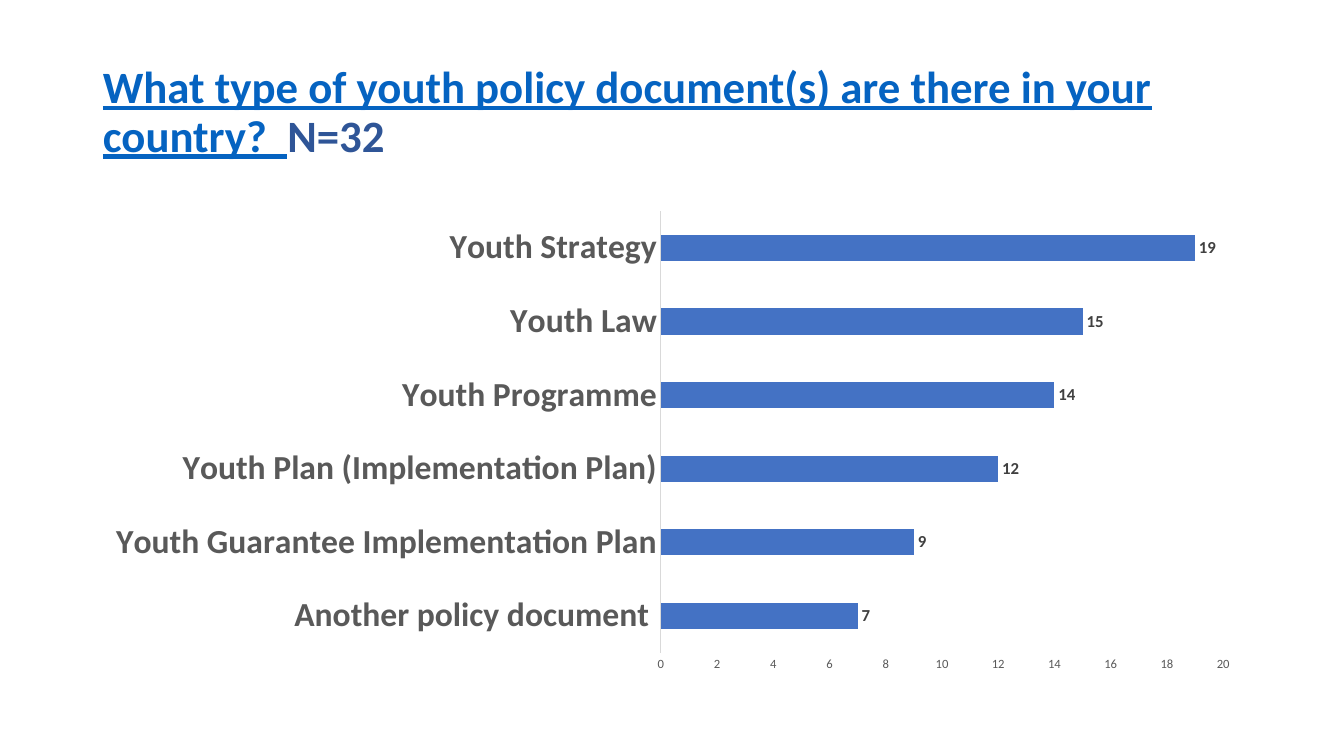
"""Build the youth policy documents slide with its bar chart."""
from lxml.etree import SubElement
from pptx import Presentation
from pptx.chart.data import CategoryChartData
from pptx.dml.color import RGBColor
from pptx.enum.chart import XL_CHART_TYPE as ChartType
from pptx.enum.chart import XL_LABEL_POSITION as LabelPosition
from pptx.enum.chart import XL_TICK_MARK as TickMark
from pptx.enum.text import MSO_ANCHOR as Anchor
from pptx.enum.text import MSO_AUTO_SIZE as AutoSize
from pptx.enum.text import PP_ALIGN as Align
from pptx.oxml.ns import qn
from pptx.util import Inches, Pt

FONT = "Calibri"
LINK_BLUE = RGBColor(0x05, 0x63, 0xC1)
DARK_BLUE = RGBColor(0x2F, 0x55, 0x97)
BAR_BLUE = RGBColor(0x44, 0x72, 0xC4)
AXIS_GREY = RGBColor(0x59, 0x59, 0x59)
LABEL_GREY = RGBColor(0x40, 0x40, 0x40)
LINE_GREY = RGBColor(0xD9, 0xD9, 0xD9)
BLACK = RGBColor(0, 0, 0)

LEFT, WIDTH = Inches(0.92), Inches(11.5)
DOCUMENTS = {
    "Another policy document ": 7,
    "Youth Guarantee Implementation Plan": 9,
    "Youth Plan (Implementation Plan)": 12,
    "Youth Programme": 14,
    "Youth Law": 15,
    "Youth Strategy": 19,
}
PLOT_SHARES = {"x": 0.49, "y": 0.02, "w": 0.485, "h": 0.92}


def style_font(font, size, color, bold=False):
    """Set the face, size, colour and weight of a font."""
    font.name = FONT
    font.size = Pt(size)
    font.bold = bold
    font.color.rgb = color


def add_run(para, text, color, underline):
    """Add one bold title run."""
    run = para.add_run()
    run.text = text
    style_font(run.font, 32, color, bold=True)
    run.font.underline = underline


def fill_title(page):
    """Place the title and write the question with its sample size."""
    title = page.shapes.title
    title.left, title.top = LEFT, Inches(0.4)
    title.width, title.height = WIDTH, Inches(1.45)
    frame = title.text_frame
    frame.word_wrap = True
    frame.auto_size = AutoSize.NONE
    frame.vertical_anchor = Anchor.MIDDLE
    para = frame.paragraphs[0]
    para.alignment = Align.LEFT
    para.line_spacing = 0.9
    question = "What type of youth policy document(s) are there in your country?  "
    add_run(para, question, LINK_BLUE, True)
    add_run(para, "N=32", DARK_BLUE, False)


def style_axis(axis, size, bold=False):
    """Strip ticks and gridlines from an axis and set its labels."""
    axis.major_tick_mark = axis.minor_tick_mark = TickMark.NONE
    axis.has_major_gridlines = False
    style_font(axis.tick_labels.font, size, AXIS_GREY, bold)


def fix_plot_area(chart):
    """Pin the inner plot area to its shares of the chart."""
    plot_area = chart._chartSpace.chart.plotArea
    for old in plot_area.findall(qn("c:layout")):
        plot_area.remove(old)
    layout = SubElement(plot_area, qn("c:layout"))
    plot_area.insert(0, layout)
    manual = SubElement(layout, qn("c:manualLayout"))
    settings = {"layoutTarget": "inner", "xMode": "edge", "yMode": "edge", **PLOT_SHARES}
    for tag, value in settings.items():
        SubElement(manual, qn(f"c:{tag}")).set("val", str(value))


def add_bars(page):
    """Add the bar chart of policy document types."""
    data = CategoryChartData()
    data.categories = list(DOCUMENTS)
    data.add_series("Series 1", list(DOCUMENTS.values()))
    chart = page.shapes.add_chart(
        ChartType.BAR_CLUSTERED, LEFT, Inches(2), WIDTH, Inches(4.76), data
    ).chart
    chart.has_legend = chart.has_title = False
    style_font(chart.font, 10, BLACK)
    style_axis(chart.category_axis, 24, bold=True)
    line = chart.category_axis.format.line
    line.color.rgb = LINE_GREY
    line.width = Pt(0.75)
    values = chart.value_axis
    style_axis(values, 9)
    values.format.line.fill.background()
    values.minimum_scale, values.maximum_scale, values.major_unit = 0, 20, 2

    plot = chart.plots[0]
    plot.gap_width = 182
    plot.vary_by_categories = False
    series = plot.series[0]
    series.format.fill.solid()
    series.format.fill.fore_color.rgb = BAR_BLUE
    labels = series.data_labels
    labels.show_value = True
    labels.position = LabelPosition.OUTSIDE_END
    style_font(labels.font, 12, LABEL_GREY, bold=True)
    fix_plot_area(chart)


def main():
    """Create the deck and save it."""
    deck = Presentation()
    deck.slide_width, deck.slide_height = Inches(13.33), Inches(7.5)
    page = deck.slides.add_slide(deck.slide_layouts[5])
    fill_title(page)
    add_bars(page)
    deck.save("out.pptx")


if __name__ == "__main__":
    main()
